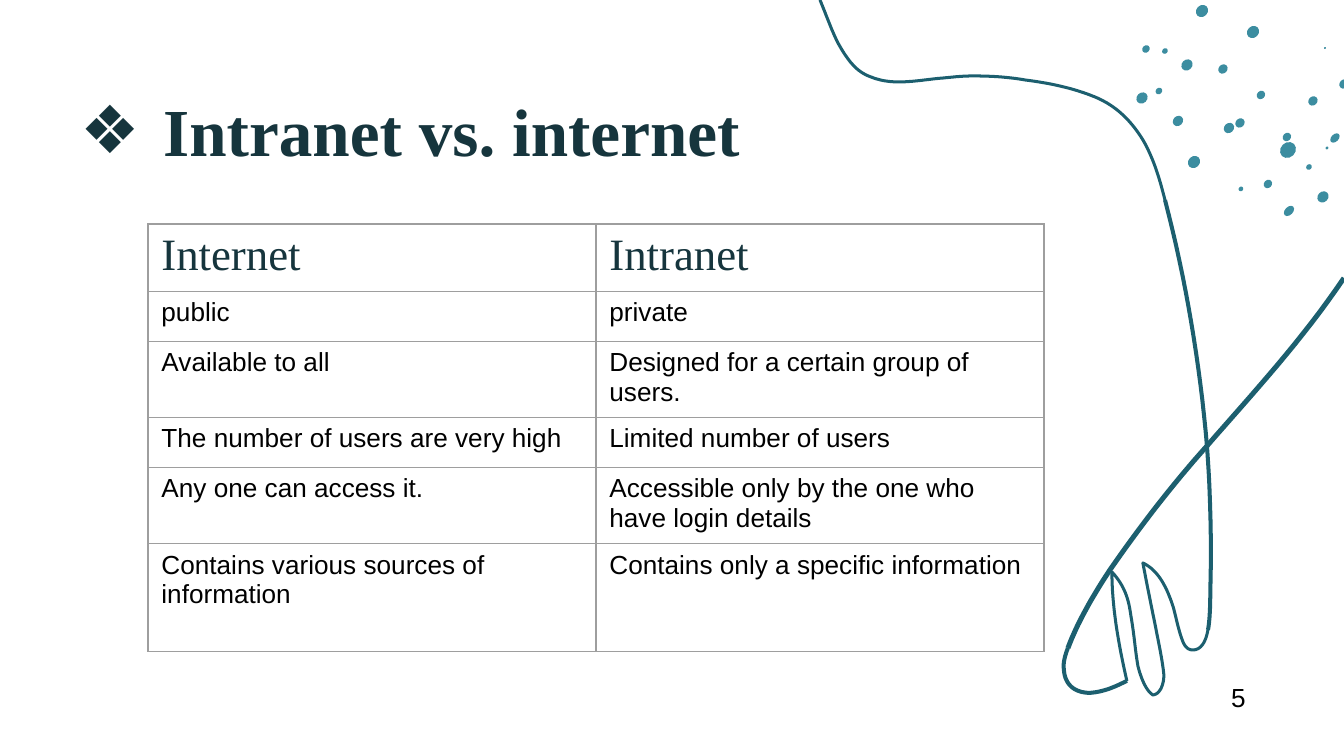
from lxml import etree
from pptx import Presentation
from pptx.dml.color import RGBColor
from pptx.enum.shapes import MSO_SHAPE
from pptx.oxml.ns import qn
from pptx.util import Pt

EMU_PER_PX = 9144000 / 1344

INK = RGBColor(0x16, 0x35, 0x3D)
BLACK = RGBColor(0x00, 0x00, 0x00)
DOT_TEAL = RGBColor(0x3C, 0x8D, 0xA0)
LINE_TEAL = RGBColor(0x1C, 0x5F, 0x6F)
BORDER_GREY = "9E9E9E"
SERIF, SANS = "Times New Roman", "Arial"

# Centre x, centre y and length of each dot, relative to the cluster.
ROUND_DOTS = [
    (152, 150, 17), (173, 167, 6), (191, 148, 3), (177, 101, 10), (151, 137, 9),
    (125, 95, 9), (104, 123, 10), (93, 128, 11), (87, 69, 10), (42, 121, 11),
    (51, 65, 12), (23, 91, 7), (6, 98, 12), (29, 51, 6), (10, 49, 8),
    (58, 162, 13), (189, 48, 2), (208, 84, 10), (187, 197, 12), (132, 184, 9),
    (105, 189, 5), (117, 32, 13), (66, 11, 13),
]
LONG_DOTS = [(199, 138, 11), (153, 211, 12)]

# Each strand: width in px, start point, then Bezier curves (two controls, end).
STRANDS = [
    (3, (0, 0), [
        (6, 14, 11, 29, 18, 43), (27, 59, 36, 72, 51, 77), (61, 81, 70, 82, 79, 82),
        (94, 82, 110, 79, 124, 78), (134, 77, 143, 76, 153, 76),
        (170, 76, 188, 77, 205, 80), (229, 83, 253, 88, 275, 97),
        (297, 106, 312, 122, 323, 140), (334, 159, 340, 180, 345, 200)]),
    (4, (345, 200), [
        (366, 280, 380, 364, 387, 446), (390, 485, 391, 525, 391, 564),
        (390, 590, 391, 615, 388, 630)]),
    (3, (388, 630), [
        (386, 642, 381, 650, 373, 650), (367, 650, 364, 645, 362, 639),
        (358, 628, 356, 616, 353, 606), (348, 591, 340, 571, 323, 563),
        (328, 590, 334, 618, 339, 644), (341, 654, 343, 665, 344, 675),
        (344, 683, 341, 694, 333, 695), (325, 690, 320, 674, 318, 666),
        (315, 648, 314, 632, 311, 616), (309, 600, 305, 586, 292, 572),
        (292, 605, 298, 642, 307, 681)]),
    (4, (307, 681), [
        (295, 687, 284, 692, 270, 693), (255, 693, 245, 685, 244, 670),
        (243, 663, 245, 656, 248, 648)]),
    (5, (248, 648), [
        (257, 624, 272, 597, 290, 570), (319, 528, 352, 485, 387, 446),
        (435, 391, 483, 339, 524, 278)]),
]

TABLE_ROWS = [
    (67, "Internet", "Intranet"),
    (50, "public", "private"),
    (76, "Available to all", "Designed for a certain group of users."),
    (50, "The number of users are very high", "Limited number of users"),
    (76, "Any one can access it.", "Accessible only by the one who have login details"),
    (108, "Contains various sources of information", "Contains only a specific information"),
]


def px(length):
    return round(length * EMU_PER_PX)


def add_run(paragraph, text, size, font_name, color, bold=False):
    run = paragraph.add_run()
    run.text = text
    run.font.size = Pt(size)
    run.font.name = font_name
    run.font.bold = bold
    run.font.color.rgb = color


def add_text_box(slide, left, top, width, height):
    text_box = slide.shapes.add_textbox(px(left), px(top), px(width), px(height))
    text_box.text_frame.word_wrap = True
    return text_box.text_frame.paragraphs[0]


def add_dots(slide, left, top):
    for dots, ratio in ((ROUND_DOTS, 0.87), (LONG_DOTS, 0.67)):
        for x, y, length in dots:
            width = length * ratio
            dot = slide.shapes.add_shape(
                MSO_SHAPE.OVAL, px(left + x - length / 2), px(top + y - width / 2),
                px(length), px(width))
            dot.rotation = 315
            dot.shadow.inherit = False
            dot.fill.solid()
            dot.fill.fore_color.rgb = DOT_TEAL
            dot.line.fill.background()


def curve_points(start, curves, steps=16):
    """Return evenly stepped points along a chain of cubic Bezier curves."""
    points = []
    for x1, y1, x2, y2, x3, y3 in curves:
        for step in range(1, steps + 1):
            t = step / steps
            weights = ((1 - t) ** 3, 3 * t * (1 - t) ** 2, 3 * t * t * (1 - t), t ** 3)
            points.append(tuple(
                sum(weight * value for weight, value in zip(weights, axis))
                for axis in ((start[0], x1, x2, x3), (start[1], y1, y2, y3))))
        start = (x3, y3)
    return points


def add_wavy_line(slide, left, top):
    for width, start, curves in STRANDS:
        builder = slide.shapes.build_freeform(px(start[0]), px(start[1]))
        builder.add_line_segments(
            [(px(x), px(y)) for x, y in curve_points(start, curves)], close=False)
        strand = builder.convert_to_shape(px(left), px(top))
        strand.shadow.inherit = False
        strand.fill.background()
        strand.line.color.rgb = LINE_TEAL
        strand.line.width = px(width)


def add_title(slide, left, top, width, height):
    paragraph = add_text_box(slide, left, top, width, height)
    properties = paragraph._p.get_or_add_pPr()
    properties.set("marL", str(px(83)))
    properties.set("indent", str(-px(83)))
    bullet_color = etree.SubElement(properties, qn("a:buClr"))
    etree.SubElement(bullet_color, qn("a:srgbClr"), val=str(INK))
    etree.SubElement(properties, qn("a:buSzPct"), val="99000")
    etree.SubElement(properties, qn("a:buFont"), typeface=SANS)
    etree.SubElement(properties, qn("a:buChar"), char="❖")
    add_run(paragraph, "Intranet vs. internet", 36, SERIF, INK, bold=True)


def set_borders(cell):
    properties = cell._tc.get_or_add_tcPr()
    for side in ("a:lnL", "a:lnR", "a:lnT", "a:lnB"):
        line = etree.SubElement(properties, qn(side), w=str(Pt(0.75)))
        fill = etree.SubElement(line, qn("a:solidFill"))
        etree.SubElement(fill, qn("a:srgbClr"), val=BORDER_GREY)


def add_comparison_table(slide, left, top, width):
    height = sum(row[0] for row in TABLE_ROWS)
    table = slide.shapes.add_table(
        len(TABLE_ROWS), 2, px(left), px(top), px(width), px(height)).table
    table.first_row = False
    table.horz_banding = False
    for column in table.columns:
        column.width = px(width / 2)
    for row_index, (row_height, *texts) in enumerate(TABLE_ROWS):
        table.rows[row_index].height = px(row_height)
        style = (24, SERIF, INK) if row_index == 0 else (14, SANS, BLACK)
        for column_index, text in enumerate(texts):
            cell = table.cell(row_index, column_index)
            set_borders(cell)
            cell.fill.background()
            add_run(cell.text_frame.paragraphs[0], text, *style)


def add_slide_number(slide, left, top, width, height):
    add_run(add_text_box(slide, left, top, width, height), "5", 14, SANS, BLACK)


def main():
    presentation = Presentation()
    presentation.slide_width = px(1344)
    presentation.slide_height = px(756)
    slide = presentation.slides.add_slide(presentation.slide_layouts[6])
    add_dots(slide, 1136, 0)
    add_wavy_line(slide, 820, 0)
    add_title(slide, 67, 83, 695, 95)
    add_comparison_table(slide, 148, 224, 896)
    add_slide_number(slide, 1218, 675, 79, 46)
    presentation.save("out.pptx")


if __name__ == "__main__":
    main()
